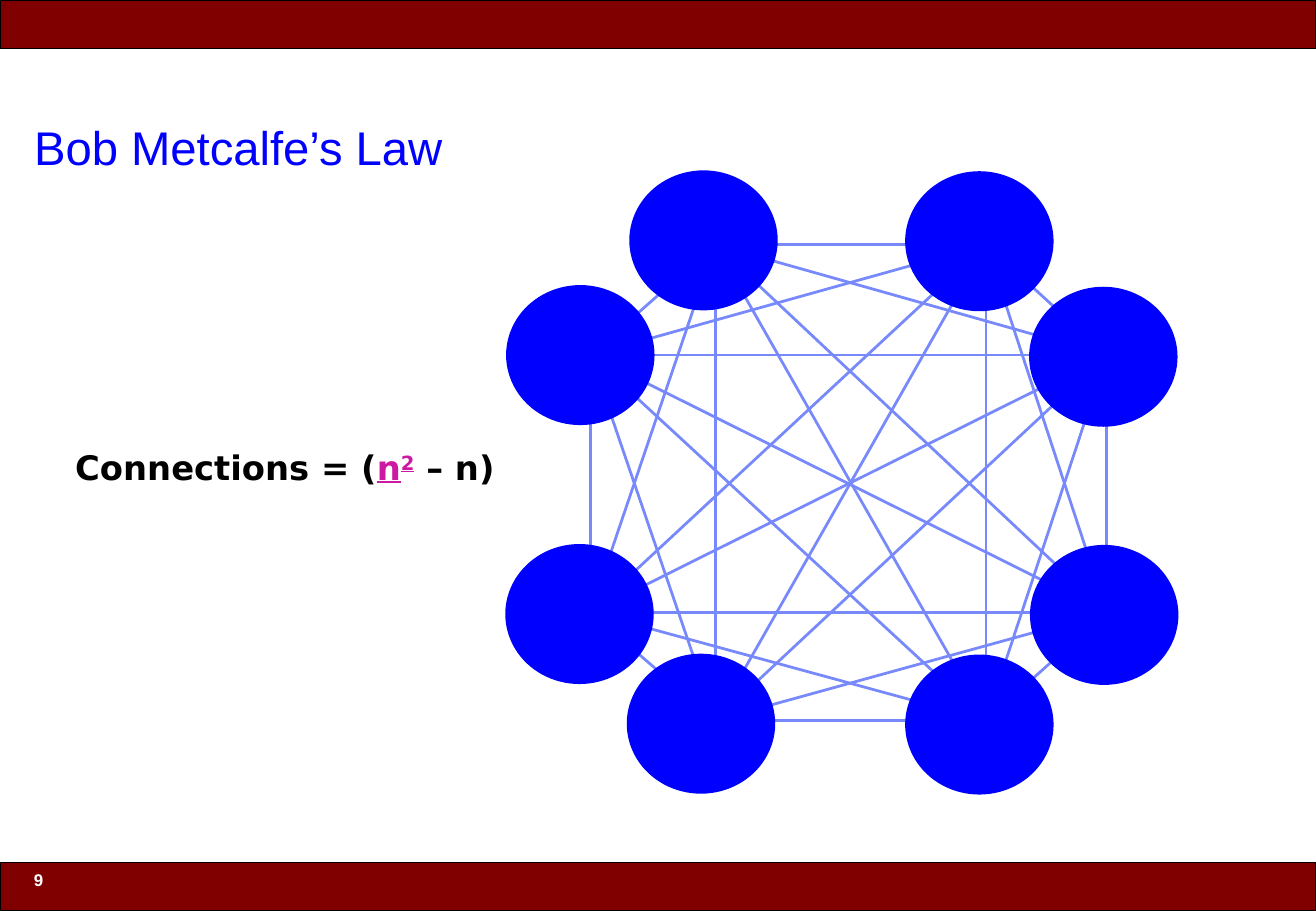
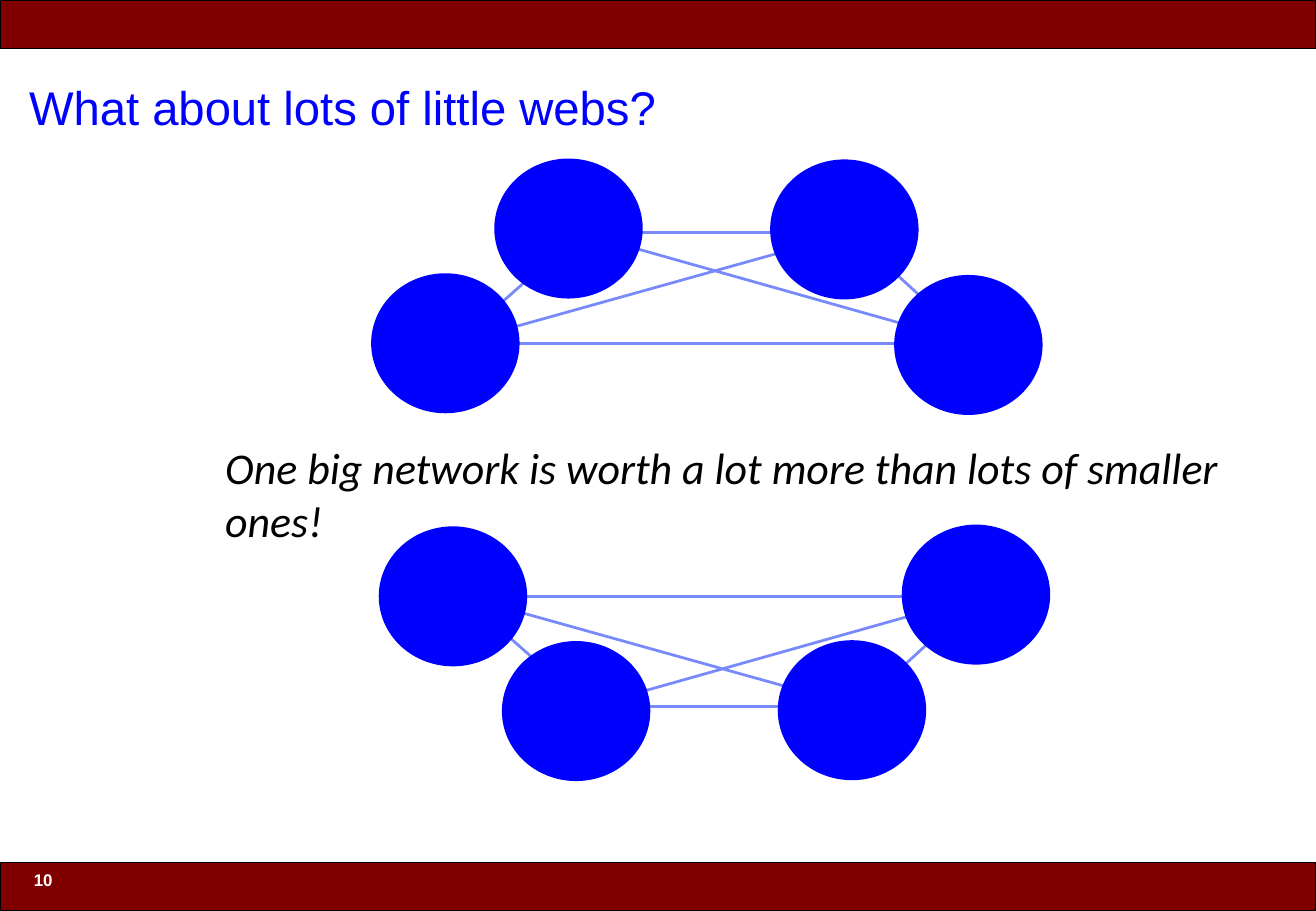
from dataclasses import dataclass
from itertools import combinations

from lxml import etree
from pptx import Presentation
from pptx.dml.color import RGBColor
from pptx.enum import shapes, text
from pptx.oxml import ns
from pptx.util import Pt


@dataclass(frozen=True)
class Theme:
    """Colours, fonts and type sizes shared by the slides."""
    band: str = "800000"
    ink: str = "000000"
    paper: str = "FFFFFF"
    node: str = "0000FF"
    link: str = "7889FB"
    accent: str = "CD19A2"
    title_font: str = "Arial"
    formula_font: str = "DejaVu Sans"
    message_font: str = "Calibri"
    title_size: float = 28
    message_size: float = 26
    formula_size: float = 20
    number_size: float = 10
    band_line: float = 0.75
    link_line: float = 1.63


THEME = Theme()
WIDTH, HEIGHT, BAND_HEIGHT = 780, 540, 28.8
DISC_WIDTH, DISC_HEIGHT = 88, 83
ARC_HEIGHT = 152

ARC_DISCS = [(44, 109.5), (117, 41.5), (280.5, 42), (354, 110.5)]
ARC_HUBS = [(50, 109.5), (124, 44), (284.5, 44), (356, 109.5)]
RING_DISCS = ARC_DISCS + [(354.5, 263.5), (280.5, 328.5), (115.5, 328), (43.5, 263)]
RING_HUBS = ARC_HUBS + [(356, 262), (284.5, 326), (124, 326), (50, 262)]


def points(*values):
    """Convert plain numbers to lengths in points."""
    return [Pt(value) for value in values]


def write(frame, *runs, font, size, color, bold=False, italic=False,
          align=text.PP_ALIGN.LEFT, anchor=text.MSO_ANCHOR.TOP, wrap=True,
          line_spacing=None):
    """Fill a text frame with runs, each a string or a (string, overrides) pair."""
    frame.word_wrap = wrap
    frame.auto_size = text.MSO_AUTO_SIZE.NONE
    frame.vertical_anchor = anchor
    paragraph = frame.paragraphs[0]
    paragraph.alignment = align
    paragraph.line_spacing = line_spacing
    for item in runs:
        content, overrides = (item, {}) if isinstance(item, str) else item
        run = paragraph.add_run()
        run.text = content
        run.font.name, run.font.size = font, Pt(size)
        run.font.bold, run.font.italic = bold, italic
        run.font.underline = overrides.get("underline")
        run.font.color.rgb = RGBColor.from_string(overrides.get("color", color))
        if "baseline" in overrides:
            run.font._element.set("baseline", str(overrides["baseline"]))


def add_text(slide, box, *runs, inset=None, **style):
    """Place a text box and write its runs."""
    frame = slide.shapes.add_textbox(*points(*box)).text_frame
    if inset is not None:
        frame.margin_left = frame.margin_right = Pt(inset)
        frame.margin_top = frame.margin_bottom = Pt(inset)
    write(frame, *runs, **style)


def add_solid(parent, kind, box, fill, line=None):
    """Draw a filled preset shape with an optional outline."""
    shape = parent.shapes.add_shape(kind, *points(*box))
    shape.shadow.inherit = False
    shape.fill.solid()
    shape.fill.fore_color.rgb = RGBColor.from_string(fill)
    if line:
        shape.line.color.rgb = RGBColor.from_string(line)
        shape.line.width = Pt(THEME.band_line)
    else:
        shape.line.fill.background()
    return shape


def add_link(parent, start, end):
    """Draw one network link."""
    link = parent.shapes.add_connector(
        shapes.MSO_CONNECTOR.STRAIGHT, *points(*start, *end))
    link.line.color.rgb = RGBColor.from_string(THEME.link)
    link.line.width = Pt(THEME.link_line)
    etree.SubElement(link._element.spPr, ns.qn("a:effectLst"))


def add_network(slide, left, top, discs, hubs, flip_height=None):
    """Link every pair of hubs and cover the hubs with discs."""
    def place(spot):
        """Move a spot into the box, mirrored if a flip height is given."""
        x, y = spot
        return left + x, top + (y if flip_height is None else flip_height - y)

    group = slide.shapes.add_group_shape()
    for start, end in combinations(map(place, hubs), 2):
        add_link(group, start, end)
    for x, y in map(place, discs):
        box = (x - DISC_WIDTH / 2, y - DISC_HEIGHT / 2, DISC_WIDTH, DISC_HEIGHT)
        add_solid(group, shapes.MSO_SHAPE.FLOWCHART_CONNECTOR, box, THEME.node)


def add_bands(presentation, slide):
    """Draw the top and bottom bands and hand them to the slide master."""
    tree = presentation.slide_master.shapes.element
    for top in (0, HEIGHT - BAND_HEIGHT):
        band = add_solid(slide, shapes.MSO_SHAPE.RECTANGLE,
                         (0, top, WIDTH, BAND_HEIGHT), THEME.band, THEME.ink)
        tree.insert(2, band._element)


def start_slide(presentation, title, number, left, top):
    """Add a slide with its title and page number."""
    slide = presentation.slides.add_slide(presentation.slide_layouts[5])
    heading = slide.shapes.title
    heading.left, heading.top, heading.width, heading.height = points(
        left, top, 703.5, 39.5)
    write(heading.text_frame, title, font=THEME.title_font,
          size=THEME.title_size, color=THEME.node,
          anchor=text.MSO_ANCHOR.BOTTOM, line_spacing=0.9)
    add_text(slide, (13, 512, 86, 25), str(number), font=THEME.title_font,
             size=THEME.number_size, color=THEME.paper, bold=True)
    return slide


def build_law_slide(presentation):
    """Show the full network beside its formula."""
    slide = start_slide(presentation, "Bob Metcalfe’s Law", 9, 13, 68.5)
    squared = {"color": THEME.accent, "underline": True}
    add_text(slide, (37.5, 261.5, 271, 31), "Connections = (", ("n", squared),
             ("2", {**squared, "baseline": 30000}), " – n)",
             font=THEME.formula_font, size=THEME.formula_size,
             color=THEME.ink, bold=True, wrap=False)
    add_network(slide, 300, 101, RING_DISCS, RING_HUBS)
    return slide


def build_webs_slide(presentation):
    """Show two small networks around the message."""
    slide = start_slide(presentation, "What about lots of little webs?", 10, 10, 44.5)
    add_text(slide, (133.5, 261.5, 609, 64),
             "One big network is worth a lot more than lots of smaller ones!",
             inset=0, font=THEME.message_font, size=THEME.message_size,
             color=THEME.ink, italic=True)
    add_network(slide, 220, 94, ARC_DISCS, ARC_HUBS)
    add_network(slide, 224.5, 311, ARC_DISCS, ARC_HUBS, flip_height=ARC_HEIGHT)


def main():
    """Build and save the presentation."""
    presentation = Presentation()
    presentation.slide_width, presentation.slide_height = points(WIDTH, HEIGHT)
    add_bands(presentation, build_law_slide(presentation))
    build_webs_slide(presentation)
    presentation.save("out.pptx")


if __name__ == "__main__":
    main()
